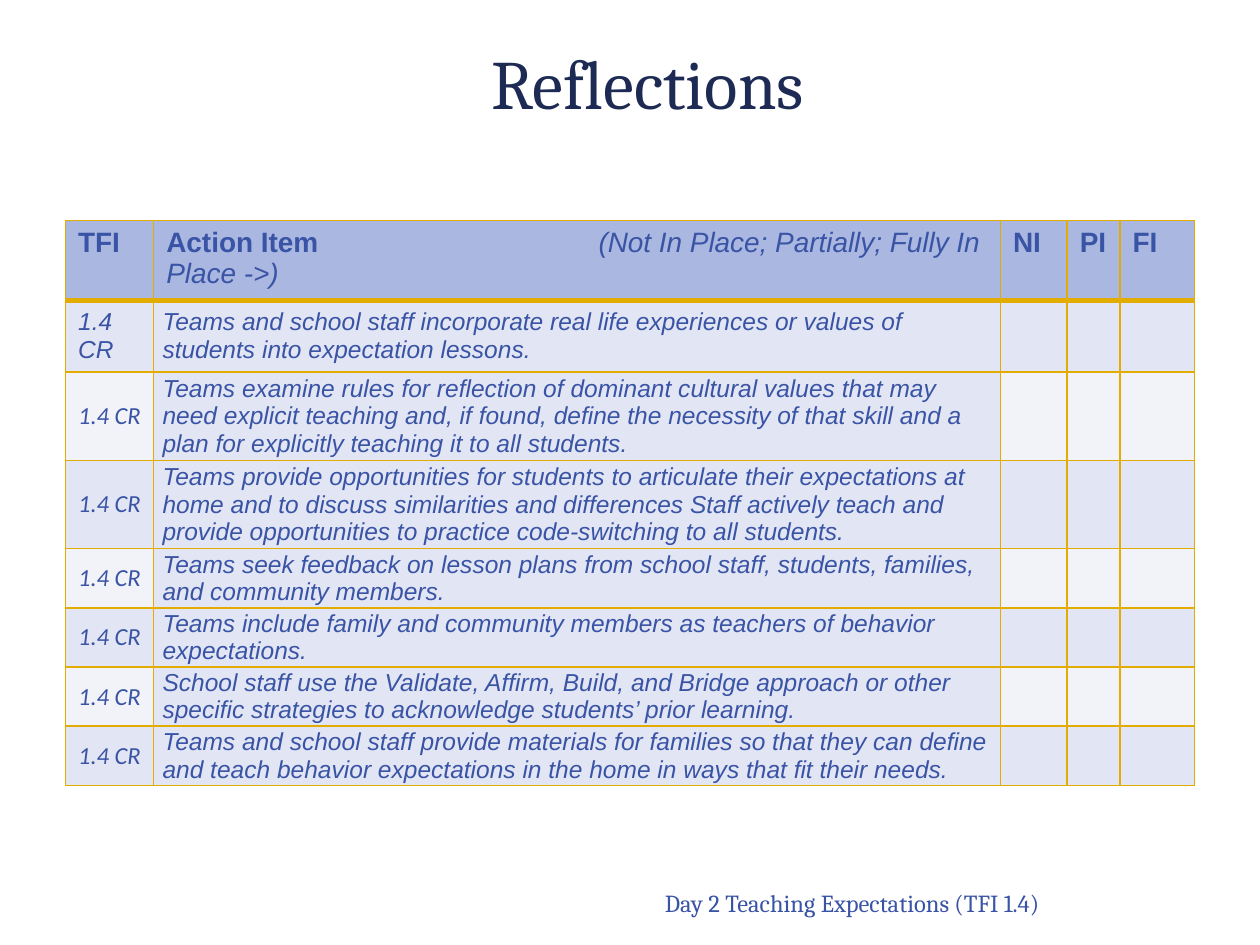
from dataclasses import dataclass

from lxml.etree import SubElement
from pptx import Presentation
from pptx.dml.color import RGBColor as RGB
from pptx.enum.text import MSO_ANCHOR as ANCHOR, MSO_AUTO_SIZE as AUTO, PP_ALIGN as ALIGN
from pptx.oxml.ns import qn
from pptx.util import Inches, Pt


@dataclass(frozen=True)
class Theme:
    navy: str = "1D2A53"
    blue: str = "3A54A5"
    gold: str = "E2AC00"
    header: str = "AAB7E1"
    band: str = "E2E5F4"
    pale: str = "F1F3F9"
    serif: str = "Cambria"
    sans: str = "Arial"
    label: str = "Calibri"
    title_size: float = 39.6
    head_size: int = 16
    text_size: int = 14
    rule: int = 1
    head_rule: int = 3


COLUMNS = [0.7, 6.72, 0.53, 0.42, 0.59]
HEIGHTS = [0.63, 0.57, 0.7, 0.7, 0.47, 0.47, 0.47, 0.47]
HEADINGS = ["TFI", "Action Item", "NI", "PI", "FI"]
SCALE_NOTE = "\t(Not In Place; Partially; Fully In Place ->)"
NOTE_TAB = 3.43
ITEM_CODE = "1.4 CR"
ACTIONS = [
    "Teams and school staff incorporate real life experiences or values of students into expectation lessons.",
    "Teams examine rules for reflection of dominant cultural values that may need explicit teaching and, "
    "if found, define the necessity of that skill and a plan for explicitly teaching it to all students.",
    "Teams provide opportunities for students to articulate their expectations at home and to discuss "
    "similarities and differences Staff actively teach and provide opportunities to practice "
    "code-switching to all students.",
    "Teams seek feedback on lesson plans from school staff, students, families, and community members.",
    "Teams include family and community members as teachers of behavior expectations.",
    "School staff use the Validate, Affirm, Build, and Bridge approach or other specific strategies "
    "to acknowledge students’ prior learning.",
    "Teams and school staff provide materials for families so that they can define and teach behavior "
    "expectations in the home in ways that fit their needs.",
]


class SlideBuilder:
    def __init__(self, slide, theme):
        self.slide = slide
        self.theme = theme

    def run(self, p, text, color, **font):
        r = p.add_run()
        r.text = text
        for name, value in font.items():
            setattr(r.font, name, value)
        r.font.color.rgb = RGB.from_string(color)

    def title(self, text, left, top, width, height):
        t = self.theme
        sp = self.slide.shapes.title
        box = {"left": left, "top": top, "width": width, "height": height}
        for name, value in box.items():
            setattr(sp, name, Inches(value))
        tf = sp.text_frame
        tf.auto_size = AUTO.NONE
        tf.vertical_anchor = ANCHOR.MIDDLE
        p = tf.paragraphs[0]
        p.alignment = ALIGN.CENTER
        self.run(p, text, t.navy, name=t.serif, size=Pt(t.title_size))

    def footer(self, text, left, top, width, height):
        t = self.theme
        sp = self.slide.shapes.add_textbox(*map(Inches, (left, top, width, height)))
        tf = sp.text_frame
        tf.word_wrap = True
        tf.vertical_anchor = ANCHOR.BOTTOM
        p = tf.paragraphs[0]
        p.alignment = ALIGN.RIGHT
        self.run(p, text, t.blue, name=t.serif, size=Pt(t.text_size))

    def borders(self, cell, **widths):
        tc_pr = cell._tc.get_or_add_tcPr()
        for side in "LRTB":
            width = Pt(widths.get(side, self.theme.rule))
            ln = SubElement(tc_pr, qn(f"a:ln{side}"), w=str(width))
            fill = SubElement(ln, qn("a:solidFill"))
            SubElement(fill, qn("a:srgbClr"), val=self.theme.gold)

    def fill(self, cell, color):
        cell.fill.solid()
        cell.fill.fore_color.rgb = RGB.from_string(color)

    def header_row(self, table):
        t = self.theme
        font = {"name": t.sans, "size": Pt(t.head_size)}
        for col, heading in enumerate(HEADINGS):
            cell = table.cell(0, col)
            self.borders(cell, B=t.head_rule)
            self.fill(cell, t.header)
            p = cell.text_frame.paragraphs[0]
            if col == 1:
                tabs = SubElement(p._p.get_or_add_pPr(), qn("a:tabLst"))
                SubElement(tabs, qn("a:tab"), pos=str(Inches(NOTE_TAB)), algn="l")
            self.run(p, heading, t.blue, bold=True, **font)
            if col == 1:
                self.run(p, SCALE_NOTE, t.blue, bold=False, italic=True, **font)

    def action_row(self, table, row, action):
        t = self.theme
        font = {"size": Pt(t.text_size), "bold": False, "italic": True}
        for col in range(len(COLUMNS)):
            cell = table.cell(row, col)
            self.borders(cell, T=t.head_rule if row == 1 else t.rule)
            self.fill(cell, t.band if row % 2 or col == 1 else t.pale)
            cell.vertical_anchor = ANCHOR.MIDDLE
        code, item = table.cell(row, 0), table.cell(row, 1)
        margins = {"margin_left": 0.07, "margin_right": 0.07, "margin_top": 0, "margin_bottom": 0}
        for name, value in margins.items():
            setattr(item, name, Inches(value))
        code_font = t.sans if row == 1 else t.label
        self.run(code.text_frame.paragraphs[0], ITEM_CODE, t.blue, name=code_font, **font)
        self.run(item.text_frame.paragraphs[0], action, t.blue, name=t.sans, **font)

    def table(self, left, top):
        frame = self.slide.shapes.add_table(
            len(HEIGHTS), len(COLUMNS), Inches(left), Inches(top),
            Inches(sum(COLUMNS)), Inches(sum(HEIGHTS)))
        table = frame.table
        for column, width in zip(table.columns, COLUMNS):
            column.width = Inches(width)
        for row, height in zip(table.rows, HEIGHTS):
            row.height = Inches(height)
        self.header_row(table)
        for row, action in enumerate(ACTIONS, 1):
            self.action_row(table, row, action)


def main():
    prs = Presentation()
    prs.slide_width, prs.slide_height = Inches(10), Inches(7.5)
    builder = SlideBuilder(prs.slides.add_slide(prs.slide_layouts[5]), Theme())
    builder.footer("Day 2 Teaching Expectations (TFI 1.4)", 3.63, 6.69, 4.72, 0.64)
    builder.table(0.52, 1.75)
    builder.title("Reflections", 1.32, 0.3, 7.64, 0.7)
    prs.save("out.pptx")


if __name__ == "__main__":
    main()
